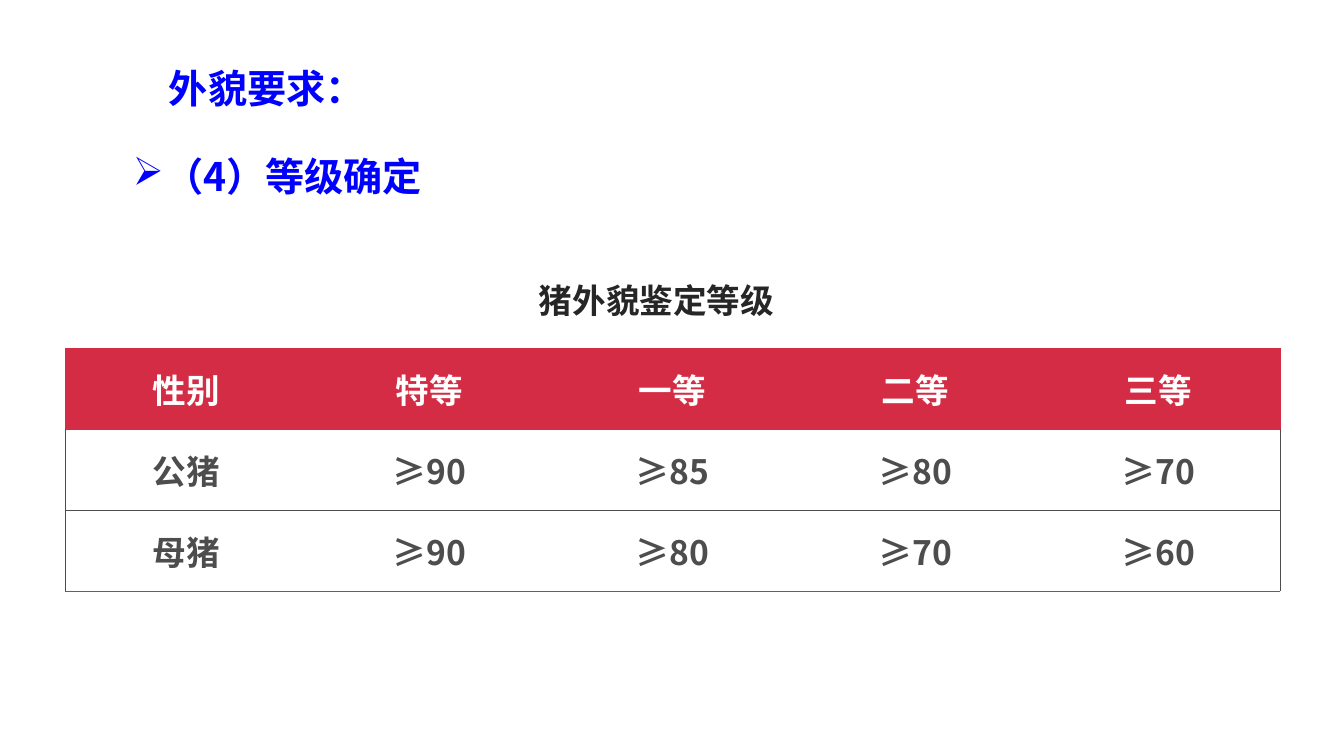
from pptx import Presentation
from pptx.dml.color import RGBColor
from pptx.enum.lang import MSO_LANGUAGE_ID
from pptx.enum.text import MSO_ANCHOR, MSO_AUTO_SIZE, PP_ALIGN
from pptx.oxml.ns import qn
from pptx.util import Emu, Pt
from lxml.etree import SubElement

FACE = "Noto Sans CJK SC"
RED, BLUE, GREY = "D42C44", "0000FF", "4D4D4D"
ROWS = [
    ["性别", "特等", "一等", "二等", "三等"],
    ["公猪", "≥90", "≥85", "≥80", "≥70"],
    ["母猪", "≥90", "≥80", "≥70", "≥60"],
]


def px(count):
    return Emu(round(count * 12192000 / 1344))


def tint(code):
    return RGBColor.from_string(code)


def add_run(para, text, size, color):
    run = para.add_run()
    run.text = text
    font = run.font
    font.size, font.bold, font.name = Pt(size), True, FACE
    font.color.rgb = tint(color)
    font.language_id = MSO_LANGUAGE_ID.SIMPLIFIED_CHINESE
    SubElement(font._element, qn("a:ea"), typeface=FACE)


def add_label(slide, area, text, size, color, anchor=MSO_ANCHOR.MIDDLE):
    box = slide.shapes.add_textbox(*map(px, area))
    frame = box.text_frame
    frame.word_wrap = True
    frame.vertical_anchor = anchor
    para = frame.paragraphs[0]
    para.line_spacing = 1.5
    add_run(para, text, size, color)
    return frame


def add_bullet(para, mark, indent):
    props = para._p.get_or_add_pPr()
    props.set("marL", str(px(indent)))
    props.set("indent", str(-px(indent)))
    SubElement(props, qn("a:buChar"), char=mark)


def add_edge(cell, side, color):
    props = cell._tc.get_or_add_tcPr()
    line = SubElement(props, qn(f"a:{side}"), w=str(Pt(0.5)))
    if color:
        fill = SubElement(line, qn("a:solidFill"))
        SubElement(fill, qn("a:srgbClr"), val=color)
    else:
        SubElement(line, qn("a:noFill"))


def fill_cell(cell, text, row, col):
    head = row == 0
    cell.vertical_anchor = MSO_ANCHOR.MIDDLE
    para = cell.text_frame.paragraphs[0]
    para.alignment = PP_ALIGN.CENTER
    add_run(para, text, 24, "FFFFFF" if head else GREY)
    side = RED if head else GREY
    last = len(ROWS) - 1
    add_edge(cell, "lnL", side if col == 0 else None)
    add_edge(cell, "lnR", side if col == len(ROWS[0]) - 1 else None)
    add_edge(cell, "lnT", RED if row < 2 else GREY)
    add_edge(cell, "lnB", GREY if 0 < row < last else RED)
    if head:
        cell.fill.solid()
        cell.fill.fore_color.rgb = tint(RED)
    else:
        cell.fill.background()


def add_grid(slide, left, top, width, height):
    rows, cols = len(ROWS), len(ROWS[0])
    area = map(px, (left, top, width * cols, height * rows))
    table = slide.shapes.add_table(rows, cols, *area).table
    table.horz_banding = False
    for row, texts in enumerate(ROWS):
        for col, text in enumerate(texts):
            fill_cell(table.cell(row, col), text, row, col)


def main():
    deck = Presentation()
    deck.slide_width, deck.slide_height = px(1344), px(756)
    slide = deck.slides.add_slide(deck.slide_layouts[6])
    topic = add_label(slide, (123, 132, 388, 65), "（4）等级确定", 28, BLUE)
    add_bullet(topic.paragraphs[0], "➢", 31)
    add_grid(slide, 65, 348, 243, 81)
    add_label(slide, (159, 49, 242, 55), "外貌要求：", 28, BLUE)
    title = add_label(slide, (527, 255, 259, 72), "猪外貌鉴定等级", 24, "262626", MSO_ANCHOR.TOP)
    title.word_wrap = False
    title.auto_size = MSO_AUTO_SIZE.SHAPE_TO_FIT_TEXT
    title.paragraphs[0].alignment = PP_ALIGN.CENTER
    deck.save("out.pptx")


if __name__ == "__main__":
    main()
